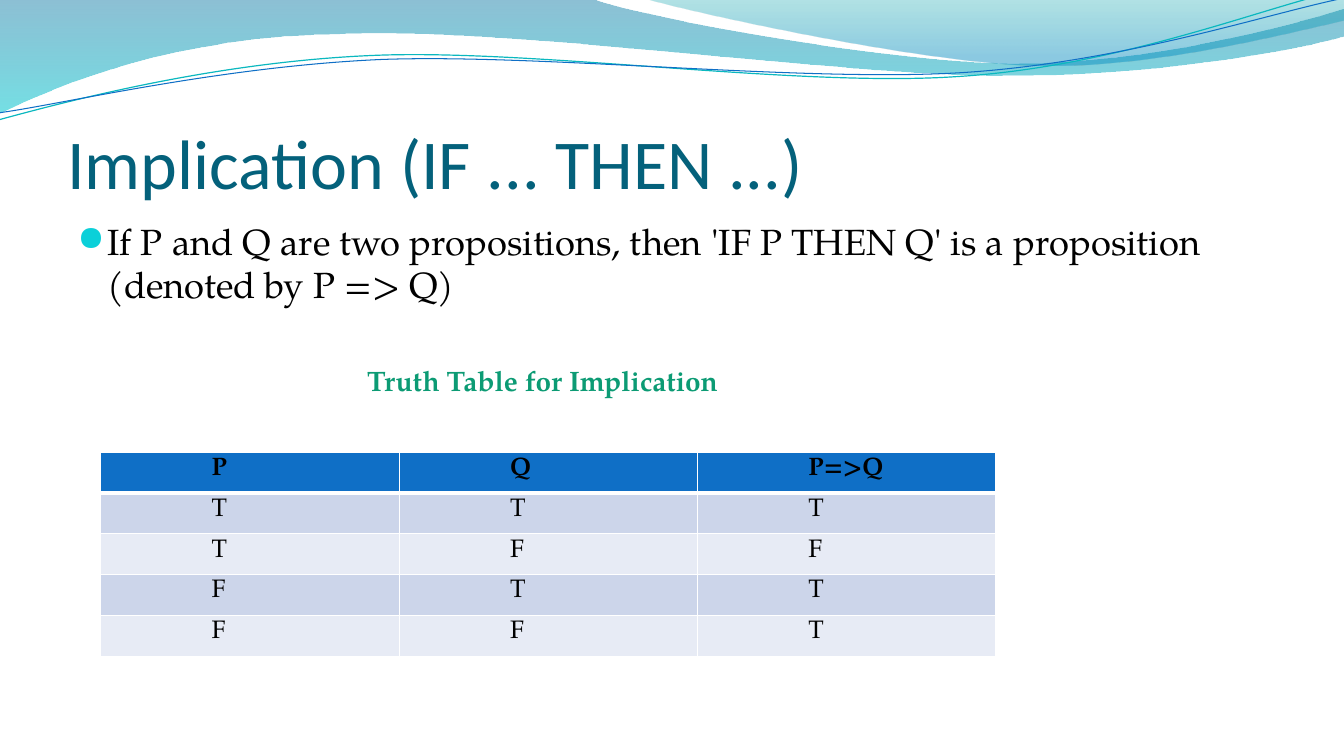
from lxml.etree import SubElement as Sub
from pptx import Presentation
from pptx.dml.color import RGBColor as Rgb
from pptx.enum.text import MSO_ANCHOR as Anchor
from pptx.oxml.ns import qn
from pptx.util import Cm, Pt

TITLE = "Implication (IF ... THEN ...)"
POINT = "If P and Q are two propositions, then 'IF P THEN Q' is a proposition (denoted by P => Q)"
LABEL = "Truth Table for Implication"
ROWS = [
    ("P", "Q", "P=>Q"),
    ("T", "T", "T"),
    ("T", "F", "F"),
    ("F", "T", "T"),
    ("F", "F", "T"),
]

WAVES = [
    {"fill": [(0, "0074A1", 45), (1, "00C6CF", 55)],
     "start": (0, 0),
     "steps": [(14.91, -0.03),
               (16.1, 0.43, 22.48, 1.6, 25.68, 1.6),
               (28.91, 1.6, 32.46, 0.66, 33.86, 0.23),
               (33.91, 0.91),
               (33.3, 1.12, 29.46, 1.93, 25.25, 1.91),
               (21.06, 1.91, 12.93, 0.71, 8.71, 0.86),
               (4.37, 0.91, 1.55, 2.11, -0.03, 2.87)]},
    {"fill": [(0, "00A1A9", 30), (0.8, "008BBF", 45)],
     "start": (16.23, -0.03),
     "steps": [(17.25, 0.28, 23.09, 1.57, 26.04, 1.65),
               (28.98, 1.75, 32.56, 0.81, 33.86, 0.53),
               (33.86, 0)]},
    {"line": ("0AB8BF", 0.85),
     "start": (-0.03, 3.02),
     "steps": [(1.63, 2.57, 5.36, 1.57, 9.37, 1.4),
               (13.39, 1.22, 20.07, 2.21, 24.13, 1.93),
               (28.19, 1.68, 31.8, 0.2, 33.81, -0.25)]},
    {"line": ("0F6FC6", 0.75),
     "start": (0, 2.84),
     "steps": [(1.6, 2.62, 5.54, 1.68, 9.6, 1.5),
               (13.64, 1.35, 20.22, 2.08, 24.26, 1.83),
               (28.32, 1.57, 31.88, 0.36, 33.88, -0.05)]},
]

THEME = {
    "head": "Calibri", "body": "TeX Gyre Pagella", "sign": "OpenSymbol",
    "title": "04617B", "ink": "000000", "label": "0C9B74", "dot": "0BD0D9",
    "top": "0F6FC6", "bands": ("E7EBF5", "CCD5EA"), "rule": "FFFFFF",
    "big": 50, "text": 26, "mid": 20, "small": 18,
}


def hue(code):
    return Rgb.from_string(code)


def say(frame, text, size, color="ink", font="body", bold=False,
        left=0, hang=0, gap=0, dot=None, new=False):
    para = frame.add_paragraph() if new else frame.paragraphs[0]
    para.space_before = Pt(gap)
    run = para.add_run()
    run.text = text
    run.font.name = THEME[font]
    run.font.size = Pt(THEME[size])
    run.font.bold = bold
    run.font.color.rgb = hue(THEME[color])
    props = para._p.get_or_add_pPr()
    props.set("marL", str(Cm(left)))
    props.set("indent", str(Cm(-hang)))
    if dot:
        Sub(Sub(props, qn("a:buClr")), qn("a:srgbClr"), val=THEME["dot"])
        Sub(props, qn("a:buSzPct"), val="95000")
        Sub(props, qn("a:buFont"), typeface=THEME["sign"])
        Sub(props, qn("a:buChar"), char=dot)


def add_box(slide, left, top, width, height, pads, anchor=Anchor.TOP):
    frame = slide.shapes.add_textbox(Cm(left), Cm(top), Cm(width), Cm(height)).text_frame
    frame.word_wrap = True
    frame.vertical_anchor = anchor
    frame.margin_left, frame.margin_top, frame.margin_right, frame.margin_bottom = map(Cm, pads)
    return frame


def bend(shape, steps):
    legs = iter(list(shape._element.iter(qn("a:lnTo"))))
    for step in steps:
        leg = next(legs)
        if len(step) == 6:
            leg.addprevious(curve := leg.makeelement(qn("a:cubicBezTo")))
            for part in (leg, next(legs), next(legs)):
                curve.append(part[0])
                part.getparent().remove(part)


def add_wave(slide, start, steps, fill=None, line=None):
    spots = [(Cm(s[k]), Cm(s[k + 1])) for s in steps for k in range(0, len(s), 2)]
    pen = slide.shapes.build_freeform(Cm(start[0]), Cm(start[1]))
    pen.add_line_segments(spots, close=bool(fill))
    shape = pen.convert_to_shape()
    bend(shape, steps)
    shape.shadow.inherit = False
    if fill:
        shape.fill.gradient()
        shape.fill.gradient_angle = 270
        for stop, (place, color, alpha) in zip(shape.fill.gradient_stops, fill):
            stop.position = place
            stop.color.rgb = hue(color)
            tint = stop._gs.find(qn("a:srgbClr"))
            Sub(tint, qn("a:alpha"), val=str(alpha * 1000))
        shape.line.fill.background()
    else:
        shape.fill.background()
        shape.line.color.rgb = hue(line[0])
        shape.line.width = Pt(line[1])


def add_rules(cell, top, bottom):
    props = cell._tc.get_or_add_tcPr()
    for spot, (side, width) in enumerate([("L", 1), ("R", 1), ("T", top), ("B", bottom)]):
        rule = Sub(props, qn("a:ln" + side), w=str(Pt(width)))
        Sub(Sub(rule, qn("a:solidFill")), qn("a:srgbClr"), val=THEME["rule"])
        props.insert(spot, rule)


def add_truth(slide, left, top, wide, high):
    count = len(ROWS[0])
    table = slide.shapes.add_table(len(ROWS), count, Cm(left), Cm(top),
                                   Cm(wide * count), Cm(high * len(ROWS))).table
    for r, row in enumerate(ROWS):
        table.rows[r].height = Cm(high)
        for c, text in enumerate(row):
            cell = table.cell(r, c)
            cell.fill.solid()
            cell.fill.fore_color.rgb = hue(THEME["bands"][r % 2] if r else THEME["top"])
            add_rules(cell, 3 if r == 1 else 1, 3 if r == 0 else 1)
            say(cell.text_frame, text, "small", bold=r == 0, left=2.54)


def main():
    deck = Presentation()
    deck.slide_width, deck.slide_height = Cm(33.87), Cm(19.05)
    slide = deck.slides.add_slide(deck.slide_layouts[6])
    for wave in WAVES:
        add_wave(slide, **wave)
    head = add_box(slide, 1.7, 1.96, 30.48, 3.18, (0, 0.13, 0, 0), Anchor.BOTTOM)
    say(head, TITLE, "big", color="title", font="head")
    body = add_box(slide, 1.7, 5.38, 30.48, 12.19, (0.25, 0.13, 0.25, 0.13))
    say(body, POINT, "text", left=0.76, hang=0.76, dot="●")
    say(body, LABEL, "mid", color="label", bold=True, left=7.3, gap=41, new=True)
    add_truth(slide, 2.54, 11.39, 7.52, 1.03)
    deck.save("out.pptx")


if __name__ == "__main__":
    main()
